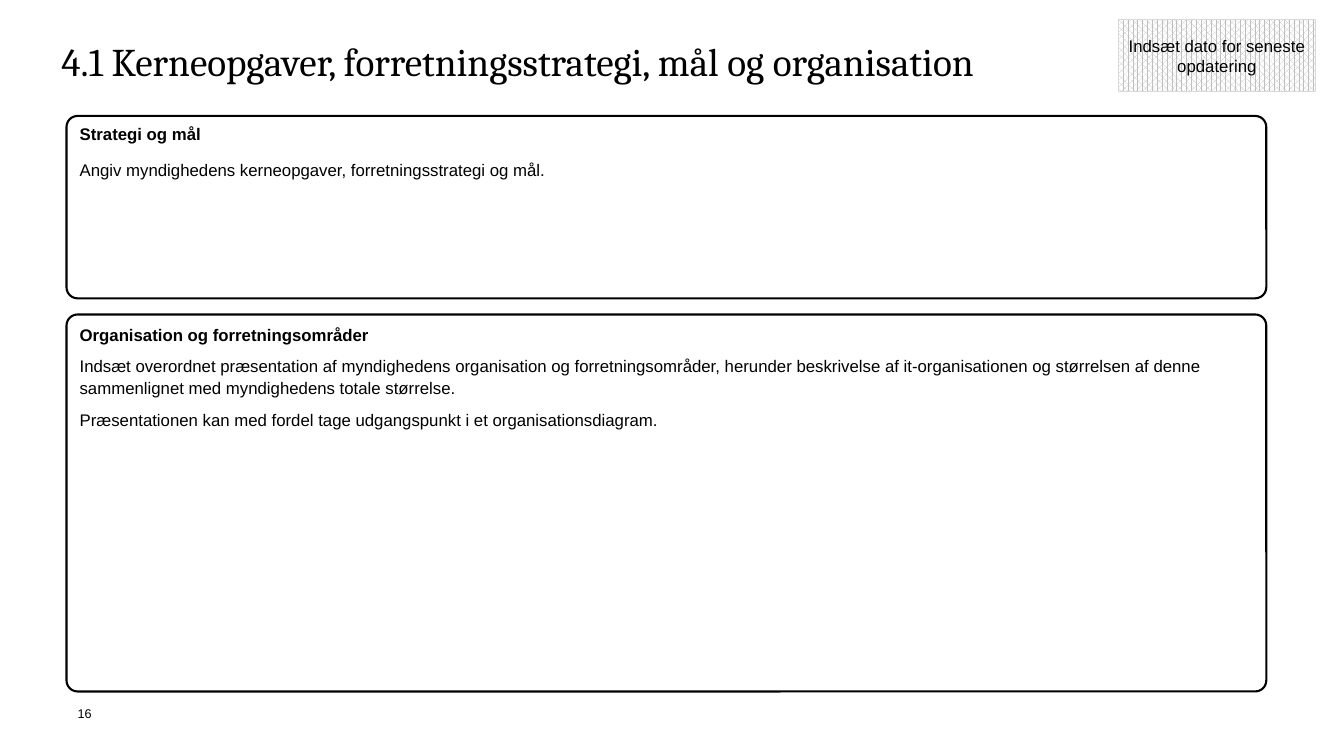
from dataclasses import dataclass

from pptx import Presentation
from pptx.dml.color import RGBColor
from pptx.enum.dml import MSO_PATTERN
from pptx.enum.shapes import MSO_SHAPE as Shape
from pptx.enum.text import MSO_ANCHOR as Anchor, PP_ALIGN as Align
from pptx.util import Inches, Pt

# Content
TITLE = "4.1 Kerneopgaver, forretningsstrategi, mål og organisation"
DATE_NOTE = "Indsæt dato for seneste opdatering"
PAGE_NUMBER = "16"
PANELS = [
    {"height": 1.81, "line_spacing": 1.0, "gap": 11, "paragraphs": [
        "Strategi og mål",
        "Angiv myndighedens kerneopgaver, forretningsstrategi og mål.",
    ]},
    {"height": 3.74, "line_spacing": 1.08, "gap": 7.2, "paragraphs": [
        "Organisation og forretningsområder",
        "Indsæt overordnet præsentation af myndighedens organisation og "
        "forretningsområder, herunder beskrivelse af it-organisationen og "
        "størrelsen af denne sammenlignet med myndighedens totale størrelse.",
        "Præsentationen kan med fordel tage udgangspunkt i et organisationsdiagram.",
    ]},
]

# Layout in inches
PANEL_LEFT, PANEL_TOP, PANEL_WIDTH, PANEL_GAP = 0.66, 1.15, 11.9, 0.16
CORNER_RADIUS = 0.11


@dataclass(frozen=True)
class Theme:
    ink: RGBColor = RGBColor(0, 0, 0)
    pattern: RGBColor = RGBColor(0xBF, 0xBF, 0xBF)
    paper: RGBColor = RGBColor(0xFF, 0xFF, 0xFF)
    note_line: RGBColor = RGBColor(0xD9, 0xD9, 0xD9)
    heading_font: str = "Cambria"
    body_font: str = "Arial"
    title_size: int = 28
    body_size: int = 12
    number_size: int = 9


theme = Theme()


def write(para, text, size, font=theme.body_font, bold=False, align=Align.LEFT):
    para.text = text
    para.alignment = align
    para.font.name = font
    para.font.size = Pt(size)
    para.font.bold = bold
    para.font.color.rgb = theme.ink


def add_label(page, area, text, size, font):
    box = page.shapes.add_textbox(*map(Inches, area))
    frame = box.text_frame
    frame.word_wrap = True
    frame.margin_left = frame.margin_right = 0
    frame.margin_top = frame.margin_bottom = 0
    write(frame.paragraphs[0], text, size, font)
    return frame.paragraphs[0]


def add_box(page, kind, area, line_color, line_width, anchor):
    box = page.shapes.add_shape(kind, *map(Inches, area))
    box.shadow.inherit = False
    box.fill.background()
    box.line.color.rgb = line_color
    box.line.width = Pt(line_width)
    box.text_frame.word_wrap = True
    box.text_frame.vertical_anchor = anchor
    return box


def add_panel(page, panel, top):
    area = (PANEL_LEFT, top, PANEL_WIDTH, panel["height"])
    box = add_box(page, Shape.ROUNDED_RECTANGLE, area, theme.ink, 1.5, Anchor.TOP)
    box.adjustments[0] = CORNER_RADIUS / panel["height"]
    frame = box.text_frame
    for index, text in enumerate(panel["paragraphs"]):
        para = frame.add_paragraph() if index else frame.paragraphs[0]
        write(para, text, theme.body_size, bold=index == 0)
        para.line_spacing = panel["line_spacing"]
        if index:
            para.space_before = Pt(panel["gap"])


def add_date_note(page):
    box = add_box(page, Shape.RECTANGLE, (11.09, 0.19, 1.96, 0.72),
                  theme.note_line, 0.5, Anchor.MIDDLE)
    box.fill.patterned()
    box.fill.pattern = MSO_PATTERN.PERCENT_70
    box.fill.fore_color.rgb = theme.pattern
    box.fill.back_color.rgb = theme.paper
    write(box.text_frame.paragraphs[0], DATE_NOTE, theme.body_size, align=Align.CENTER)


def main():
    deck = Presentation()
    deck.slide_width, deck.slide_height = Inches(13.33), Inches(7.5)
    page = deck.slides.add_slide(deck.slide_layouts[6])

    # Page number and title
    add_label(page, (0.77, 7, 0.31, 0.3), PAGE_NUMBER, theme.number_size, theme.body_font)
    title = add_label(page, (0.61, 0.4, 11.96, 1.02), TITLE,
                      theme.title_size, theme.heading_font)
    title.line_spacing = 0.96

    # Stacked panels
    top = PANEL_TOP
    for panel in PANELS:
        add_panel(page, panel, top)
        top += panel["height"] + PANEL_GAP

    # Date note in the corner
    add_date_note(page)

    deck.save("out.pptx")


if __name__ == "__main__":
    main()
